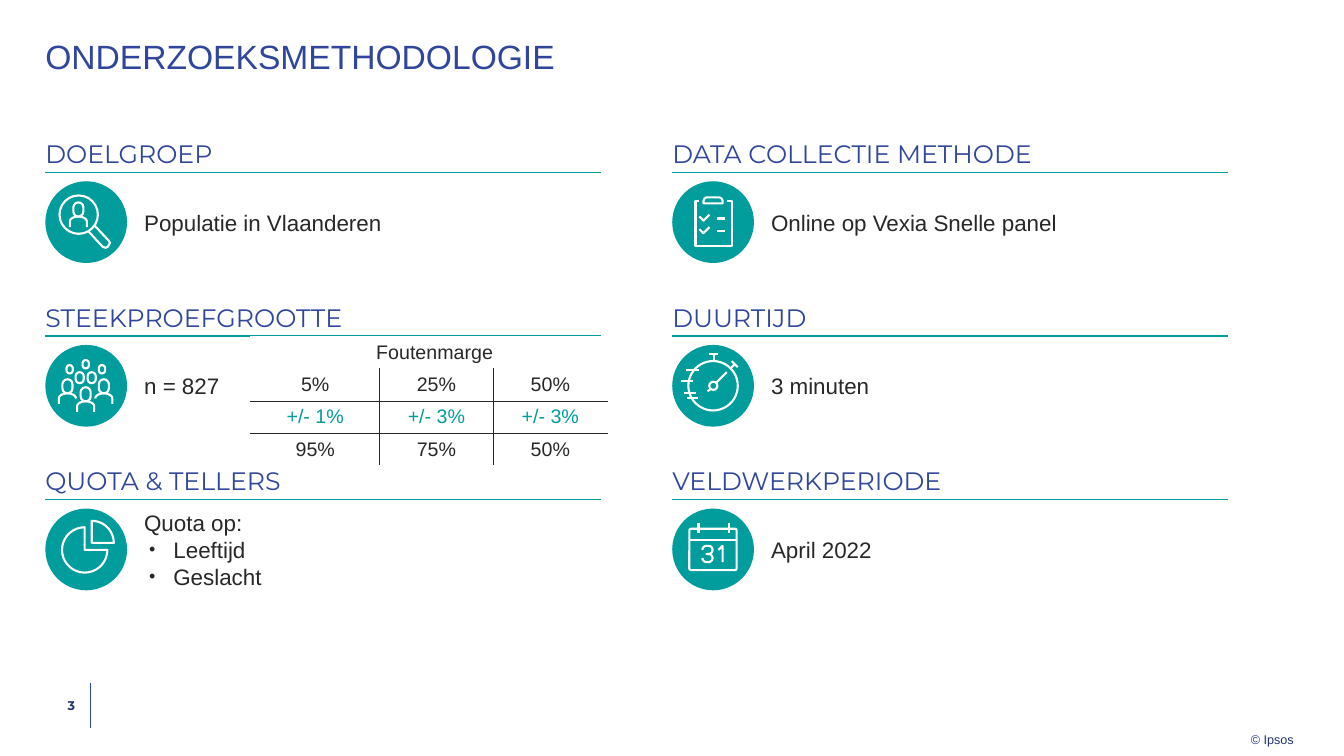
import math
import pptx
import pptx.util
import pptx.dml.color
import pptx.enum.shapes
import pptx.enum.text
import pptx.oxml
import pptx.oxml.ns
import lxml.etree

Pt = pptx.util.Pt
ALIGN = pptx.enum.text.PP_ALIGN
ANCHOR = pptx.enum.text.MSO_ANCHOR
SHAPE = pptx.enum.shapes.MSO_SHAPE

THEME = {
    "blue": "2F469C", "navy": "233475", "teal": "009D9C", "ink": "282828", "white": "FFFFFF",
    "body_font": "Arial", "head_font": "Montserrat",
    "title": 24, "heading": 18, "body": 16, "table": 14, "small": 9,
}

TITLE = "ONDERZOEKSMETHODOLOGIE"
SECTIONS = [
    [("DOELGROEP", ["Populatie in Vlaanderen"], "magnifier"),
     ("STEEKPROEFGROOTTE", ["n = 827"], "people"),
     ("QUOTA & TELLERS", ["Quota op:", "• Leeftijd", "• Geslacht"], "pie")],
    [("DATA COLLECTIE METHODE", ["Online op Vexia Snelle panel"], "clipboard"),
     ("DUURTIJD", ["3 minuten"], "stopwatch"),
     ("VELDWERKPERIODE", ["April 2022"], "calendar")],
]
MARGIN_HEADING = "Foutenmarge"
MARGINS = [
    ["5%", "25%", "50%"],
    ["+/- 1%", "+/- 3%", "+/- 3%"],
    ["95%", "75%", "50%"],
]
PAGE_NUMBER = "3"
COPYRIGHT = "© Ipsos"


def person(center, top, left_arm=True, right_arm=True):
    shoulder = top + 13.7
    outline = [(center, shoulder, 6.1, 3.6, 180, 360)]
    if left_arm:
        outline.insert(0, (center - 6.1, shoulder + 3.9))
    if right_arm:
        outline.append((center + 6.1, shoulder + 3.9))
    return [("capsule", center - 3.6, top, 7.2, 10.1), ("open", outline)]


ICONS = {
    "magnifier": person(23.6, 15.1) + [
        ("ring", 10.1, 10.1, 27.4, 27.4),
        ("open", [(35.3, 31.7), (45.4, 42.5), (46.2, 44), (45.4, 45.4),
                  (44.6, 46.8), (43, 47.5), (41, 46.8), (31, 36)])],
    "people": person(28.8, 30.2) + person(15.8, 24.5, right_arm=False)
    + person(41.8, 24.5, left_arm=False)
    + [("capsule", x, 19.4, 5.8, 7.9) for x in (21.6, 30.2)]
    + [("capsule", x, y, 4.5, 6) for x, y in ((26.6, 10.8), (15.1, 14.4), (38.2, 14.4))],
    "pie": [
        ("closed", [(28.1, 29.5), (28.1, 29.5, 16.2, 16.2, 0, 270)]),
        ("closed", [(33.1, 24.5), (33.1, 24.5, 15.8, 15.8, 270, 360)])],
    "clipboard": [
        ("closed", [(22.3, 15.8), (25.2, 14.4, 2.9, 2.9, 180, 270),
                    (33.1, 14.4, 2.9, 2.9, 270, 360), (36, 15.8)]),
        ("open", [(38.9, 14.4), (42.5, 14.4), (42.5, 46.1),
                  (16.6, 46.1), (16.6, 14.4), (19.4, 14.4)])]
    + [("open", [(19.4, y), (22.3, y + 2.9), (26.6, y - 1.4)]) for y in (25.2, 34.2)]
    + [("open", [(31.7, y), (37.4, y)]) for y in (26.6, 35.6)],
    "stopwatch": [
        ("ring", 11.5, 11.5, 35.3, 35.3), ("ring", 26.4, 26.3, 5.8, 5.8)]
    + [("open", ends) for ends in (
        [(25.9, 6.5), (32.4, 6.5)], [(29.5, 6.5), (29.5, 11.5)],
        [(42.5, 11.5), (46.8, 15.8)], [(44.6, 13.7), (41.8, 16.6)],
        [(28.1, 31), (25.2, 33.1)], [(38.9, 19.4), (31, 27.4)],
        [(10.1, 18), (19.4, 18)], [(6.5, 25.9), (15.1, 25.9)],
        [(8.6, 34.6), (16.6, 34.6)], [(10.8, 38.2), (18.7, 38.2)])],
    "calendar": [
        ("sheet", 12.2, 14.4, 33.8, 29.5),
        ("open", [(12.2, 22.3), (46, 22.3)]),
        ("open", [(18.7, 10.1), (18.7, 17.3)]),
        ("open", [(40.3, 10.1), (40.3, 17.3)]),
        ("open", [(24.5, 35.3, 2.9, 2.9, 180, 90), (25.9, 35.3, 2.9, 2.9, 90, -90),
                  (24.5, 32.4), (25.9, 29.5, 2.9, 2.9, 90, -90),
                  (24.5, 29.5, 2.9, 2.9, 270, 180)]),
        ("open", [(36, 38.2), (36, 26.6), (33.1, 29.5)])],
}
PRESETS = {"ring": (SHAPE.OVAL, None), "capsule": (SHAPE.ROUNDED_RECTANGLE, 0.5),
           "sheet": (SHAPE.ROUNDED_RECTANGLE, 0.04)}

COLUMN_LEFTS = (32.4, 480.2)
FIRST_TOP, ROW_PITCH = 95, 116.9
COLUMN_WIDTH, HEADING_HEIGHT = 396.7, 28.2
ICON_DROP, ICON_SIZE = 34.5, 58.4
TEXT_INDENT, TEXT_LINE = 70.6, 19.4
TABLE_LEFT, TABLE_TOP, TABLE_ROW = 179.3, 240.3, 23.04
TABLE_COLUMNS = (91.8, 81.4, 81.4)


def rgb(name):
    return pptx.dml.color.RGBColor.from_string(THEME[name])


def write(frame, lines, size="body", color="ink", font="body_font", bold=False, align=ALIGN.LEFT,
          anchor=ANCHOR.TOP, insets=(0, 0, 0, 0), wrap=True, spacing=None):
    frame.word_wrap = wrap
    frame.vertical_anchor = anchor
    frame.margin_left, frame.margin_top, frame.margin_right, frame.margin_bottom = map(Pt, insets)
    for index, line in enumerate(lines):
        paragraph = frame.paragraphs[0] if index == 0 else frame.add_paragraph()
        paragraph.alignment = align
        if spacing:
            paragraph.line_spacing = spacing
        if line.startswith("• "):
            properties = paragraph._p.get_or_add_pPr()
            properties.set("marL", str(Pt(20.9)))
            properties.set("indent", str(Pt(-17.3)))
            for tag, key, value in (("a:buSzPct", "val", "80000"), ("a:buFont", "typeface", "Arial"),
                                    ("a:buChar", "char", "•")):
                lxml.etree.SubElement(properties, pptx.oxml.ns.qn(tag)).set(key, value)
        run = paragraph.add_run()
        run.text = line.removeprefix("• ")
        run.font.size = Pt(THEME[size])
        run.font.name = THEME[font]
        run.font.bold = bold
        run.font.color.rgb = rgb(color)


def add_text(slide, box, lines, **style):
    write(slide.shapes.add_textbox(*map(Pt, box)).text_frame, lines, **style)


def add_line(shapes, start, end, color, width):
    line = shapes.add_connector(pptx.enum.shapes.MSO_CONNECTOR.STRAIGHT, *map(Pt, (*start, *end)))
    line.line.color.rgb = rgb(color)
    line.line.width = Pt(width)
    lxml.etree.SubElement(line._element.spPr, pptx.oxml.ns.qn("a:effectLst"))


def trace(points):
    for point in points:
        if len(point) == 2:
            yield point
        else:
            x, y, radius_x, radius_y, start, end = point
            steps = math.ceil(abs(end - start) / 10)
            for step in range(steps + 1):
                angle = math.radians(start + (end - start) * step / steps)
                yield x + radius_x * math.cos(angle), y + radius_y * math.sin(angle)


def add_icon(slide, name, left, top):
    shapes = slide.shapes.add_group_shape().shapes
    disc = shapes.add_shape(SHAPE.OVAL, *map(Pt, (left, top, ICON_SIZE, ICON_SIZE)))
    disc.shadow.inherit = False
    disc.fill.solid()
    disc.fill.fore_color.rgb = rgb("teal")
    disc.line.fill.background()
    for kind, *data in ICONS[name]:
        if kind in PRESETS:
            x, y, width, height = data
            preset, rounding = PRESETS[kind]
            shape = shapes.add_shape(preset, *map(Pt, (left + x, top + y, width, height)))
            if rounding:
                shape.adjustments[0] = rounding
        else:
            points = [(left + x, top + y) for x, y in trace(data[0])]
            if len(points) == 2:
                add_line(shapes, *points, "white", 1.5)
                continue
            corners = [(Pt(x), Pt(y)) for x, y in points]
            builder = shapes.build_freeform(*corners[0])
            builder.add_line_segments(corners[1:], close=kind == "closed")
            shape = builder.convert_to_shape()
        shape.shadow.inherit = False
        shape.fill.background()
        shape.line.color.rgb = rgb("white")
        shape.line.width = Pt(1.5)


def add_border(cell, sides):
    properties = cell._tc.get_or_add_tcPr()
    for index, side in enumerate(sides):
        properties.insert(index, pptx.oxml.parse_xml(
            f'<a:ln{side} {pptx.oxml.ns.nsdecls("a")} w="{Pt(0.25)}"><a:solidFill>'
            f'<a:srgbClr val="{THEME["ink"]}"/></a:solidFill></a:ln{side}>'))


def add_margin_table(slide):
    box = (TABLE_LEFT, TABLE_TOP, sum(TABLE_COLUMNS), TABLE_ROW * 4)
    table = slide.shapes.add_table(4, 3, *map(Pt, box)).table
    table.first_row = table.horz_banding = False
    for column, width in zip(table.columns, TABLE_COLUMNS):
        column.width = Pt(width)
    for row, values in enumerate([[MARGIN_HEADING, "", ""]] + MARGINS):
        table.rows[row].height = Pt(TABLE_ROW)
        for column, value in enumerate(values):
            cell = table.cell(row, column)
            cell.fill.background()
            write(cell.text_frame, [value] if value else [], size="table",
                  color="teal" if row == 2 else "ink", align=ALIGN.CENTER)
            cell.vertical_anchor = ANCHOR.MIDDLE
            cell.margin_left = Pt(2.9 if row else 10.7)
            cell.margin_right = Pt(2.9)
            cell.margin_top = cell.margin_bottom = 0
            if row:
                edges = (("L", column > 0), ("R", column < 2), ("T", row > 1), ("B", row < 3))
                add_border(cell, [side for side, inner in edges if inner])
    table.cell(0, 0).merge(table.cell(0, 2))


def main():
    presentation = pptx.Presentation()
    presentation.slide_width, presentation.slide_height = Pt(960), Pt(540)
    slide = presentation.slides.add_slide(presentation.slide_layouts[6])
    add_line(slide.shapes, (64.8, 488.2), (64.8, 519.8), "blue", 0.5)
    add_text(slide, (893.5, 519.8, 31, 13.7), [COPYRIGHT], size="small", color="navy",
             insets=(0, 2.9, 0, 0), wrap=False)
    add_text(slide, (32.4, 28.8, 895.7, 30.2), [TITLE], size="title", color="blue", spacing=0.9)
    for left, sections in zip(COLUMN_LEFTS, SECTIONS):
        for row, (heading, lines, icon) in enumerate(sections):
            top = FIRST_TOP + row * ROW_PITCH
            rule = top + HEADING_HEIGHT
            add_text(slide, (left, top, COLUMN_WIDTH, HEADING_HEIGHT), [heading], size="heading",
                     color="blue", font="head_font", anchor=ANCHOR.BOTTOM, insets=(0, 0, 0, 2.9))
            add_line(slide.shapes, (left, rule), (left + COLUMN_WIDTH, rule), "teal", 1)
            height = TEXT_LINE * len(lines)
            text_top = top + ICON_DROP + (ICON_SIZE - height) / 2
            add_text(slide, (left + TEXT_INDENT, text_top, COLUMN_WIDTH - TEXT_INDENT, height),
                     lines, anchor=ANCHOR.MIDDLE)
            add_icon(slide, icon, left, top + ICON_DROP)
    add_text(slide, (32.4, 488.2, 32.4, 31), [PAGE_NUMBER], size="small", color="navy",
             font="head_font", bold=True, align=ALIGN.RIGHT, anchor=ANCHOR.MIDDLE,
             insets=(0, 0, 11.2, 0))
    add_margin_table(slide)
    presentation.save("out.pptx")


if __name__ == "__main__":
    main()
